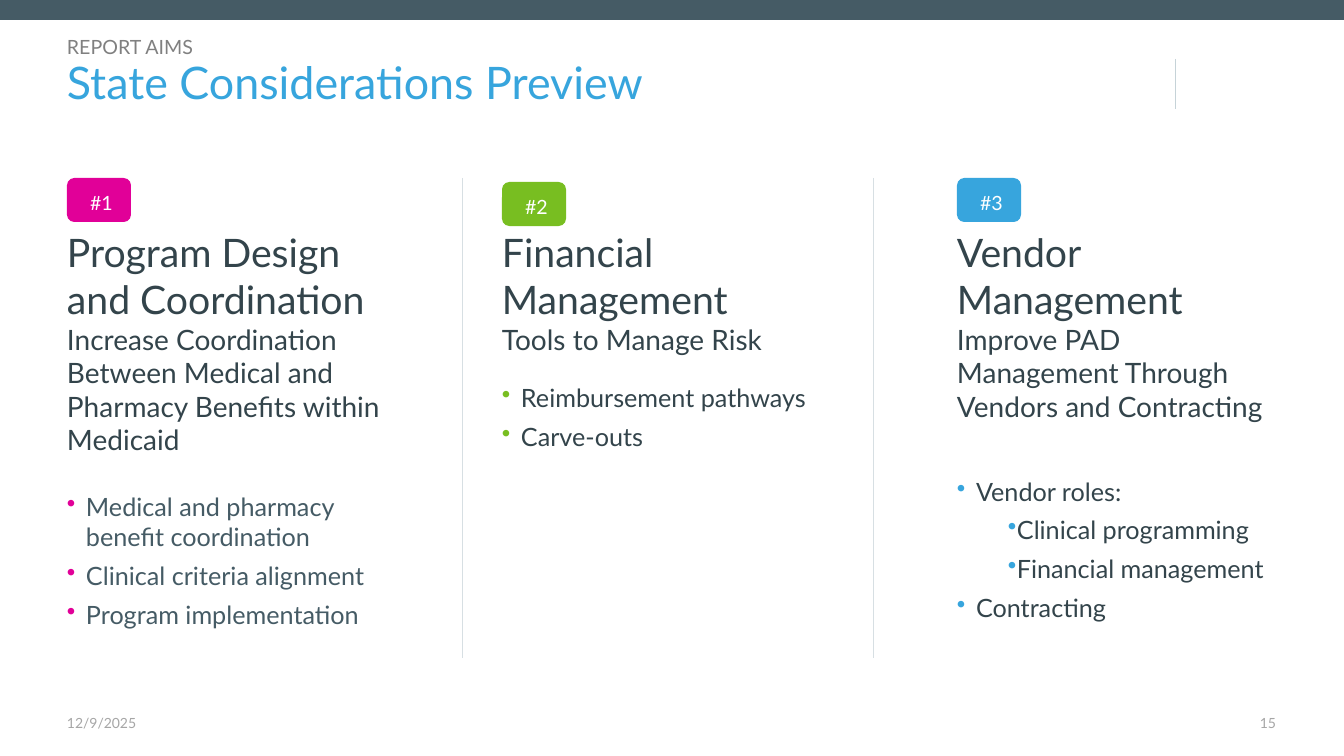
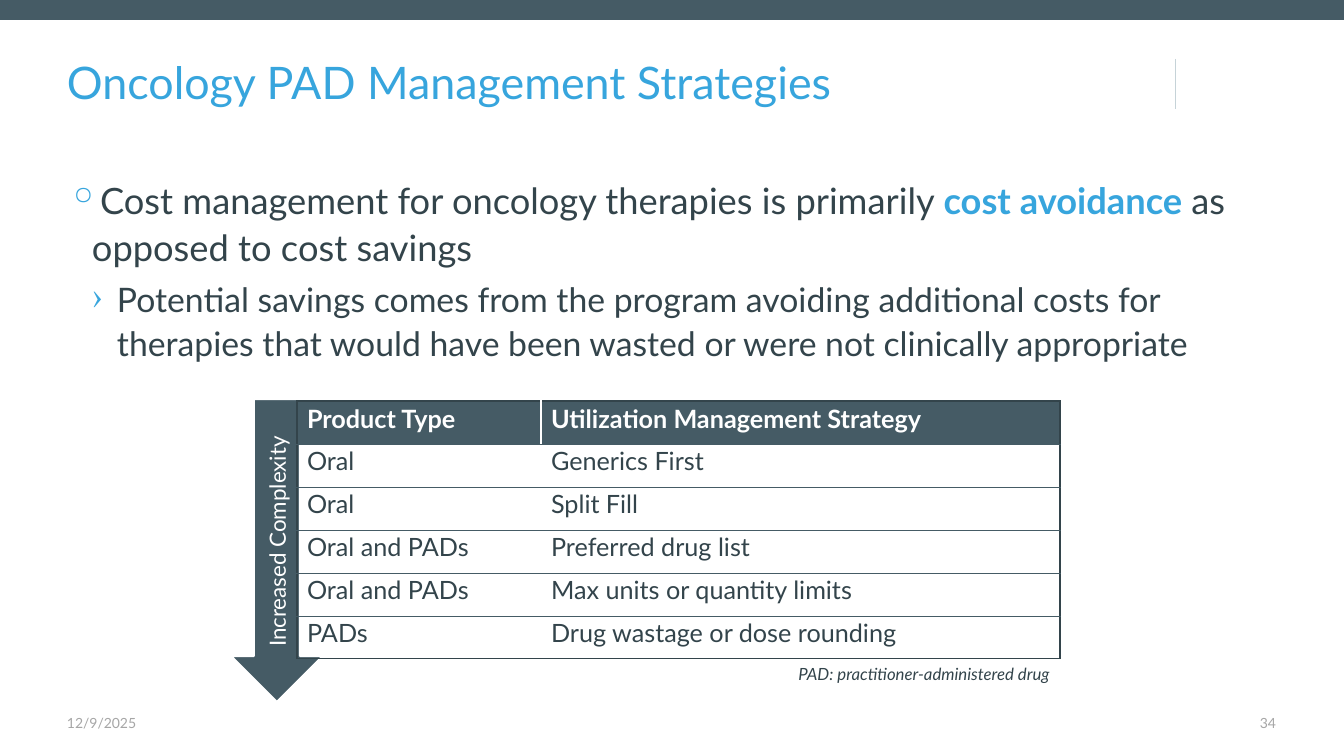
import lxml.etree
import pptx
import pptx.util
import pptx.dml.color
import pptx.enum.shapes
import pptx.enum.text
import pptx.oxml.ns

EMU = 914400 / 100.8
FONT = "Lato"
HUES = {
    "slate": "455B65", "ink": "33444B", "blue": "37A5DD", "pink": "E10098",
    "green": "78BE21", "gray": "808080", "pale": "A6A6A6", "rule": "C6D3D8",
    "split": "D7DFE3", "white": "FFFFFF",
}
RGB = {name: pptx.dml.color.RGBColor.from_string(code) for name, code in HUES.items()}
SHAPE = pptx.enum.shapes.MSO_SHAPE
ALIGN = pptx.enum.text.PP_ALIGN
MIDDLE = pptx.enum.text.MSO_ANCHOR.MIDDLE
Pt = pptx.util.Pt
qn = pptx.oxml.ns.qn
sub = lxml.etree.SubElement


def box(page, spot, pads=(0, 5, 0, 5), kind=None, fill=None):
    spot = [round(n * EMU) for n in spot]
    if kind is None:
        shape = page.shapes.add_textbox(*spot)
    else:
        shape = page.shapes.add_shape(kind, *spot)
        shape.shadow.inherit = False
        shape.fill.solid()
        shape.fill.fore_color.rgb = RGB[fill]
        shape.line.fill.background()
    frame = shape.text_frame
    frame.word_wrap = True
    sides = [round(n * EMU) for n in pads]
    frame.margin_left, frame.margin_top, frame.margin_right, frame.margin_bottom = sides
    return shape


def put(frame, text, size, hue, align=None, lead=None, gap=None, mark=None, tint=None,
        dent=(0, 0), scale=None):
    para = frame.paragraphs[0]
    if para.runs:
        para = frame.add_paragraph()
    para.text = text
    para.alignment = align
    para.line_spacing = lead
    if gap:
        para.space_before = Pt(gap)
    if mark:
        prop = para._p.get_or_add_pPr()
        prop.set("marL", str(round(dent[0] * EMU)))
        prop.set("indent", str(round(dent[1] * EMU)))
        sub(sub(prop, qn("a:buClr")), qn("a:srgbClr"), val=HUES[tint])
        if scale:
            sub(prop, qn("a:buSzPct"), val=str(scale * 1000))
        sub(prop, qn("a:buChar"), char=mark)
    para.font.name = FONT
    para.font.size = Pt(size)
    para.font.color.rgb = RGB[hue]
    return para


deck = pptx.Presentation()
deck.slide_width = round(1344 * EMU)
deck.slide_height = round(756 * EMU)

pages = []
for title, num, splits in [
    ("State Considerations Preview", "15", [462, 873]),
    ("Oncology PAD Management Strategies", "34", []),
]:
    page = deck.slides.add_slide(deck.slide_layouts[6])
    pages.append(page)
    box(page, (0, 0, 1344, 20), kind=SHAPE.RECTANGLE, fill="slate")
    rules = [(1175, 59, 109, "rule", 0.25)]
    rules += [(x, 178, 658, "split", 0.5) for x in splits]
    for x, top, end, hue, width in rules:
        rule = page.shapes.add_connector(
            pptx.enum.shapes.MSO_CONNECTOR.STRAIGHT,
            *[round(n * EMU) for n in (x, top, x, end)])
        rule.line.color.rgb = RGB[hue]
        rule.line.width = Pt(width)
        sub(rule._element.spPr, qn("a:effectLst"))
    head = box(page, (67, 59, 1058, 50), (0, 7, 0, 5)).text_frame
    head.vertical_anchor = MIDDLE
    put(head, title, 32, "blue", lead=0.9)
    put(box(page, (67, 715, 202, 22), (0, 0, 0, 0)).text_frame, "12/9/2025", 10, "pale")
    put(box(page, (1175, 715, 101, 22), (0, 0, 0, 0)).text_frame, num, 10, "pale",
        ALIGN.RIGHT)

aims, plan = pages

label = box(aims, (67, 35, 519, 22)).text_frame
label.vertical_anchor = MIDDLE
put(label, "REPORT AIMS", 14, "gray", lead=1.08)

ITEM, NEST = (19, -19), (30, 21)
for num, x, top, wide, hue, ink, name, goal, gap, items in [
    ("#1", 67, 178, 320, "pink", "slate", "Program Design and Coordination",
     "Increase Coordination Between Medical and Pharmacy Benefits within Medicaid", 25,
     [("Medical and pharmacy benefit coordination", ITEM),
      ("Clinical criteria alignment", ITEM), ("Program implementation", ITEM)]),
    ("#2", 502, 182, 317, "green", "ink", "Financial\nManagement",
     "Tools to Manage Risk", 19,
     [("Reimbursement pathways", ITEM), ("Carve-outs", ITEM)]),
    ("#3", 957, 178, 320, "blue", "ink", "Vendor\nManagement",
     "Improve PAD Management Through Vendors and Contracting", 38,
     [("Vendor roles:", ITEM), ("Clinical programming", NEST),
      ("Financial management", NEST), ("Contracting", ITEM)]),
]:
    badge = box(aims, (x, top, 64, 44), (15, 8, 10, 5), SHAPE.ROUNDED_RECTANGLE, hue)
    badge.text_frame.vertical_anchor = MIDDLE
    put(badge.text_frame, num, 14, "white", ALIGN.CENTER, 1.07).space_after = Pt(8)
    frame = box(aims, (x, 223, wide, 447)).text_frame
    put(frame, name, 28, "ink")
    put(frame, goal, 20, "ink")
    for i, (text, dent) in enumerate(items):
        put(frame, text, 18, ink, gap=6 if i else gap, mark="•", tint=hue, dent=dent)

body = box(plan, (67, 170, 1210, 222)).text_frame
para = put(body, "Cost management for oncology therapies is primarily ", 25.9, "ink",
           lead=1.08, mark="◦", tint="blue", dent=(25, -25), scale=115)
key = para.add_run()
key.text = "cost avoidance "
key.font.bold = True
key.font.color.rgb = RGB["blue"]
para.add_run().text = "as opposed to cost savings"
put(body, "Potential savings comes from the program avoiding additional costs for therapies "
    "that would have been wasted or were not clinically appropriate", 24.1, "ink",
    lead=1.08, gap=5, mark="›", tint="blue", dent=(50, -25)).level = 1

arrow = box(plan, (231, 399, 92, 303), kind=SHAPE.DOWN_ARROW, fill="slate")
arrow.line.color.rgb = RGB["white"]
arrow.line.width = Pt(1.5)

rows = [
    ("Product Type", "Utilization Management Strategy"),
    ("Oral", "Generics First"),
    ("Oral", "Split Fill"),
    ("Oral and PADs", "Preferred drug list"),
    ("Oral and PADs", "Max units or quantity limits"),
    ("PADs", "Drug wastage or dose rounding"),
]
spot = [round(n * EMU) for n in (297, 401, 763, 43 * len(rows))]
table = plan.shapes.add_table(len(rows), 2, *spot).table
table.horz_banding = False
for col, wide in zip(table.columns, (244, 519)):
    col.width = round(wide * EMU)
for r, texts in enumerate(rows):
    for c, text in enumerate(texts):
        cell = table.cell(r, c)
        para = put(cell.text_frame, text, 18, "ink" if r else "white", lead=Pt(19.5))
        para.font.bold = r == 0
        outer, inner, cross = ("ink", 1), ("white", 1), ("slate", 0.6)
        edges = {
            "L": inner if c else outer,
            "R": outer if c else inner,
            "T": cross if r else outer,
            "B": cross if r < len(rows) - 1 else outer,
        }
        prop = cell._tc.get_or_add_tcPr()
        for side, (hue, width) in edges.items():
            edge = sub(prop, qn("a:ln" + side), w=str(Pt(width)))
            sub(sub(edge, qn("a:solidFill")), qn("a:srgbClr"), val=HUES[hue])
        if r:
            cell.fill.background()
        else:
            cell.fill.solid()
            cell.fill.fore_color.rgb = RGB["slate"]

side = box(plan, (160, 523, 234, 37), (10, 5, 10, 5))
side.rotation = 270
put(side.text_frame, "Increased Complexity", 16, "white", ALIGN.CENTER)
note = box(plan, (718, 659, 342, 30), (10, 5, 10, 5)).text_frame
put(note, "PAD: practitioner-administered drug", 12, "ink", ALIGN.RIGHT).font.italic = True

deck.save("out.pptx")
